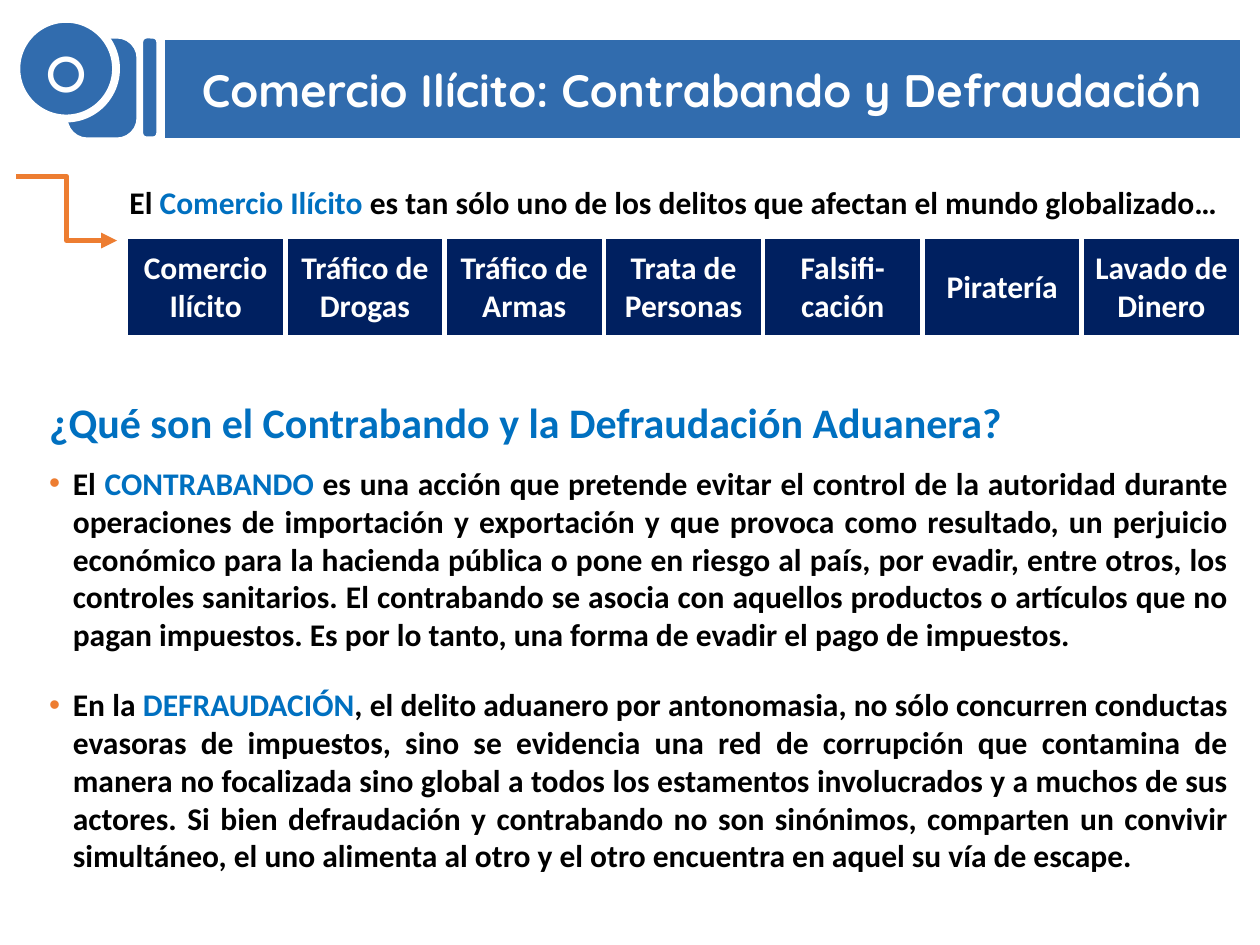
from lxml import etree
from pptx import Presentation
from pptx.dml.color import RGBColor
from pptx.enum.shapes import MSO_CONNECTOR, MSO_SHAPE
from pptx.enum.text import MSO_ANCHOR, MSO_AUTO_SIZE, PP_ALIGN
from pptx.oxml.ns import qn
from pptx.util import Cm, Pt

ROUNDED, OVAL = MSO_SHAPE.ROUNDED_RECTANGLE, MSO_SHAPE.OVAL
ELBOW = MSO_CONNECTOR.ELBOW
MIDDLE = MSO_ANCHOR.MIDDLE
LEFT, CENTER, JUSTIFY = PP_ALIGN.LEFT, PP_ALIGN.CENTER, PP_ALIGN.JUSTIFY
NO_AUTOFIT = MSO_AUTO_SIZE.NONE
TITLE_ONLY = 5
COLORS = {"band": "316CAE", "white": "FFFFFF", "navy": "002060",
          "accent": "0070C0", "orange": "ED7D31", "black": "000000"}


def rgb(name):
    return RGBColor.from_string(COLORS[name])


def add_xml(parent, tag, **attributes):
    return etree.SubElement(parent, qn(tag), attributes)


def add_solid(parent, color):
    add_xml(add_xml(parent, "a:solidFill"), "a:srgbClr", val=COLORS[color])


class SlideBuilder:
    font = "Calibri"
    body_size = 18

    def __init__(self, slide):
        self.slide = slide

    def add_spans(self, para, spans, size=body_size, align=LEFT, bold=True, font=None):
        para.alignment = align
        for text, color in spans:
            span = para.add_run()
            span.text = text
            span.font.name = font or self.font
            span.font.size = Pt(size)
            span.font.bold = bold
            span.font.color.rgb = rgb(color)

    def paint(self, shape, line_width):
        shape.fill.solid()
        shape.fill.fore_color.rgb = rgb("band")
        shape.line.color.rgb = rgb("white")
        shape.line.width = Pt(line_width)

    def title(self, text, left, top, width, height):
        title = self.slide.shapes.title
        title.left, title.top = Cm(left), Cm(top)
        title.width, title.height = Cm(width), Cm(height)
        outline = add_xml(title.element.spPr, "a:prstGeom", prst="roundRect")
        add_xml(add_xml(outline, "a:avLst"), "a:gd", name="adj", fmla="val 12700")
        self.paint(title, 1)
        frame = title.text_frame
        frame.auto_size = NO_AUTOFIT
        frame.vertical_anchor = MIDDLE
        self.add_spans(frame.paragraphs[0], [(text, "white")], 26, CENTER, font="Quicksand")

    def shape(self, kind, left, top, width, height, line_width=1):
        shape = self.slide.shapes.add_shape(kind, Cm(left), Cm(top), Cm(width), Cm(height))
        shape.shadow.inherit = False
        self.paint(shape, line_width)
        if kind == ROUNDED:
            shape.adjustments[0] = 0.29
        return shape

    def text_box(self, left, top, width, height):
        box = self.slide.shapes.add_textbox(Cm(left), Cm(top), Cm(width), Cm(height))
        box.text_frame.word_wrap = True
        return box.text_frame

    def bullet(self, para, spans):
        self.add_spans(para, spans, align=JUSTIFY)
        properties = para._p.get_or_add_pPr()
        indent = Cm(0.48)
        properties.set("marL", str(indent))
        properties.set("indent", str(-indent))
        color = add_xml(properties, "a:buClr")
        add_xml(color, "a:srgbClr", val=COLORS["orange"])
        add_xml(properties, "a:buFont", typeface="Arial")
        add_xml(properties, "a:buChar", char="•")

    def arrow(self, start, end):
        arrow = self.slide.shapes.add_connector(ELBOW, *map(Cm, start + end))
        arrow.line.color.rgb = rgb("orange")
        arrow.line.width = Pt(3)
        add_xml(arrow.line._get_or_add_ln(), "a:tailEnd", type="triangle")
        add_xml(arrow.element.spPr, "a:effectLst")

    def table_row(self, labels, left, top, width, height):
        table = self.slide.shapes.add_table(
            1, len(labels), Cm(left), Cm(top), Cm(width), Cm(height)).table
        for column, label in enumerate(labels):
            table.columns[column].width = Cm(width / len(labels))
            cell = table.cell(0, column)
            cell.vertical_anchor = MIDDLE
            cell.margin_left = cell.margin_right = Cm(0.2)
            self.add_spans(cell.text_frame.paragraphs[0], [(label, "white")], align=CENTER)
            properties = cell._tc.get_or_add_tcPr()
            for side in ("L", "R", "T", "B"):
                add_solid(add_xml(properties, f"a:ln{side}", w=str(Pt(3))), "white")
            cell.fill.solid()
            cell.fill.fore_color.rgb = rgb("navy")


def main():
    deck = Presentation()
    deck.slide_width, deck.slide_height = Cm(25.4), Cm(19.05)
    page = SlideBuilder(deck.slides.add_slide(deck.slide_layouts[TITLE_ONLY]))

    # Header band with its round ornament
    page.shape(ROUNDED, 1.35, 0.76, 1.42, 2.03)
    disc = page.shape(OVAL, 0.33, 0.38, 2.01, 2.01, 4.5)
    disc.text_frame.vertical_anchor = MIDDLE
    page.add_spans(disc.text_frame.paragraphs[0], [("○", "white")], 40, CENTER, bold=False)
    page.shape(ROUNDED, 2.87, 0.76, 0.3, 2.01)
    page.title("Comercio Ilícito: Contrabando y Defraudación", 3.3, 0.79, 21.72, 2.01)

    # Crimes of the globalized world
    page.table_row(["Comercio Ilícito", "Tráfico de Drogas", "Tráfico de Armas",
                    "Trata de Personas", "Falsifi-cación", "Piratería",
                    "Lavado de Dinero"], 2.54, 4.78, 22.48, 2.03)
    page.arrow((0.33, 3.56), (2.36, 4.85))
    intro = page.text_box(2.36, 3.56, 22.68, 1.02)
    page.add_spans(intro.paragraphs[0], [
        ("El ", "black"), ("Comercio Ilícito ", "accent"),
        ("es tan sólo uno de los delitos que afectan el mundo globalizado…", "black")])

    # Definition of smuggling
    smuggling = page.text_box(0.74, 7.87, 24.28, 5.46)
    page.add_spans(smuggling.paragraphs[0], [
        ("¿Qué son el Contrabando y la Defraudación Aduanera?", "accent")], 24)
    para = smuggling.add_paragraph()
    para.space_before = Pt(9.75)
    page.bullet(para, [
        ("El ", "black"), ("CONTRABANDO", "accent"),
        (" es una acción que pretende evitar el control de la autoridad durante "
         "operaciones de importación y exportación y que provoca como resultado, un "
         "perjuicio económico para la hacienda pública o pone en riesgo al país, por "
         "evadir, entre otros, los controles sanitarios. El contrabando se asocia con "
         "aquellos productos o artículos que no pagan impuestos. Es por lo tanto, una "
         "forma de evadir el pago de impuestos.", "black")])

    # Definition of customs fraud
    fraud = page.text_box(0.74, 13.69, 24.28, 4.11)
    page.bullet(fraud.paragraphs[0], [
        ("En la ", "black"), ("DEFRAUDACIÓN", "accent"),
        (", el delito aduanero por antonomasia, no sólo concurren conductas evasoras "
         "de impuestos, sino se evidencia una red de corrupción que contamina de "
         "manera no focalizada sino global a todos los estamentos involucrados y a "
         "muchos de sus actores. Si bien defraudación y contrabando no son sinónimos, "
         "comparten un convivir simultáneo, el uno alimenta al otro y el otro "
         "encuentra en aquel su vía de escape.", "black")])

    deck.save("out.pptx")


if __name__ == "__main__":
    main()
